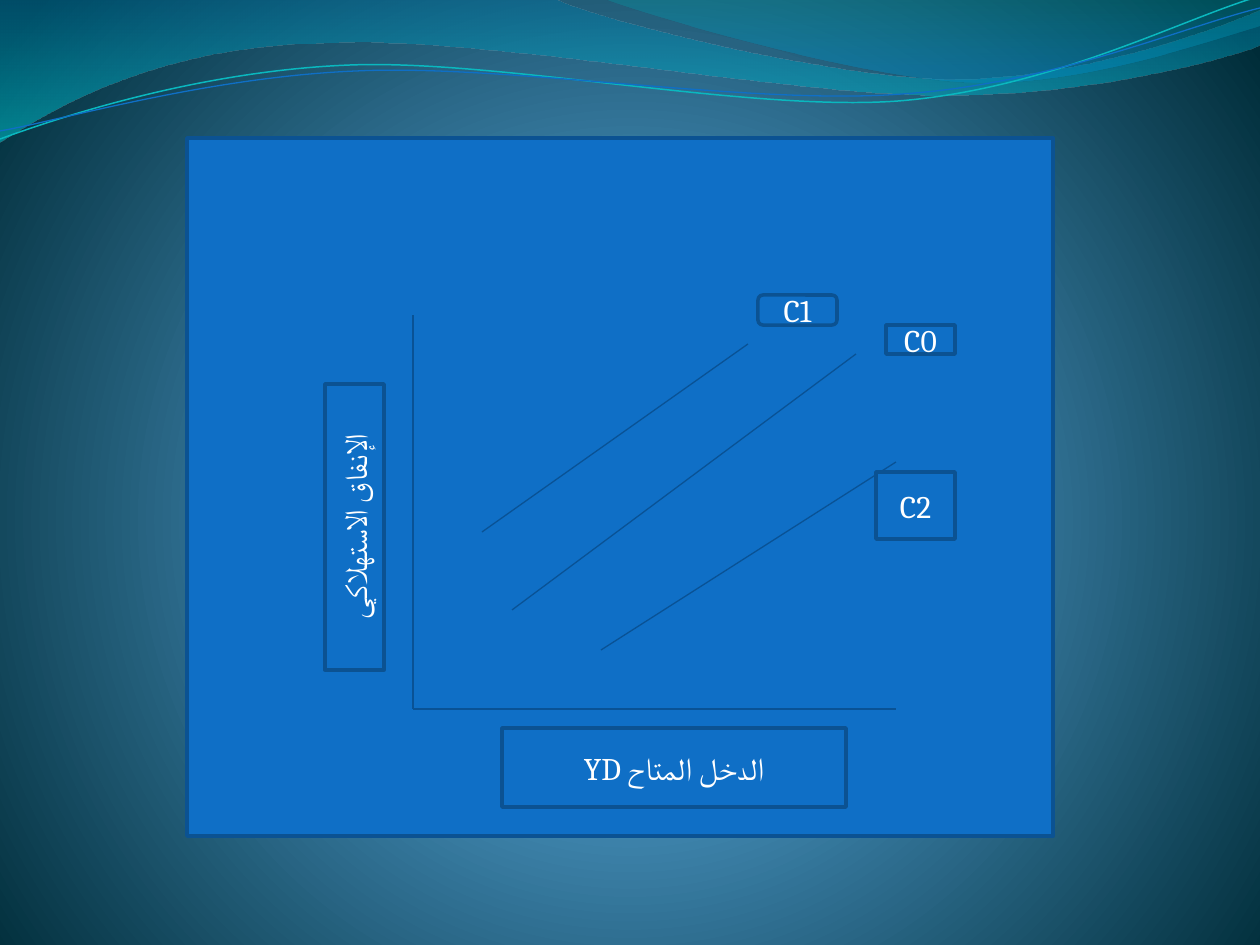
"""Build a slide showing shifts of the consumption function."""
from lxml.etree import SubElement
from pptx import Presentation
from pptx.dml.color import RGBColor
from pptx.enum.shapes import MSO_CONNECTOR, MSO_SHAPE
from pptx.enum.text import MSO_ANCHOR, PP_ALIGN
from pptx.oxml import parse_xml
from pptx.oxml.ns import nsdecls, qn
from pptx.util import Emu, Pt

SCALE = 914400 / 126
WIDTH, HEIGHT = 1260, 945
FONT = "Cambria"

COLORS = {
    "panel": "0F6FC6", "border": "0B5292", "axis": "095295", "text": "FFFFFF",
    "teal": "0AB8BF", "blue": "0F6FC6",
}
BACKGROUND_STOPS = [(0, "4AA0D6", 100), (25, "4C98C7", 100), (100, "002C38", 100)]
BACKGROUND_SHADE = ('<a:path path="circle">'
                    '<a:fillToRect l="10000" t="110000" r="10000" b="100000"/></a:path>')
DOWNWARD_SHADE = '<a:lin ang="5400000" scaled="1"/>'

# Each segment holds one point for a straight line or three for a Bezier curve.
WAVES = [
    ((0, 0), [
        [(554, -1)],
        [(600, 21), (837, 79), (955, 79)],
        [(1075, 79), (1207, 33), (1260, 11)],
        [(1261, 45)],
        [(1239, 55), (1096, 96), (940, 95)],
        [(784, 95), (481, 35), (324, 43)],
        [(163, 45), (58, 105), (-1, 142)],
    ], [(0, "0074A1", 45), (100, "00C6CF", 55)]),
    ((604, -1), [
        [(641, 14), (859, 78), (969, 82)],
        [(1079, 87), (1211, 40), (1260, 26)],
        [(1260, 0)],
    ], [(0, "00A1A9", 30), (80, "008BBF", 45)]),
]
RIBBONS = [
    ((0, 139), [
        [(60, 117), (199, 71), (349, 65)],
        [(498, 59), (747, 112), (898, 101)],
        [(1050, 89), (1182, 19), (1257, -3)],
    ], "teal", 0.85),
    ((0, 131), [
        [(59, 121), (207, 77), (357, 71)],
        [(508, 64), (752, 106), (903, 94)],
        [(1053, 84), (1186, 26), (1260, 8)],
    ], "blue", 0.75),
]
PANEL = (187, 138, 866, 698)
LINES = [
    (413, 315, 413, 709),
    (413, 709, 896, 709),
    (512, 610, 856, 354),
    (482, 532, 748, 344),
    (601, 650, 896, 462),
]
LABELS = [
    ("الإنفاق الاستهلاكي", (325, 384, 59, 286), MSO_SHAPE.RECTANGLE, True),
    ("الدخل المتاح YD", (502, 728, 344, 79), MSO_SHAPE.RECTANGLE, False),
    ("C1", (758, 295, 79, 30), MSO_SHAPE.ROUNDED_RECTANGLE, False),
    ("C2", (876, 472, 79, 67), MSO_SHAPE.RECTANGLE, False),
    ("C0", (886, 325, 69, 29), MSO_SHAPE.RECTANGLE, False),
]


def px(value):
    return Emu(round(value * SCALE))


def color(name):
    return RGBColor.from_string(COLORS[name])


def set_gradient(fill, parent, stops, shade):
    fill.gradient()
    items = "".join(
        f'<a:gs pos="{pos * 1000}"><a:srgbClr val="{rgb}">'
        f'<a:alpha val="{alpha * 1000}"/></a:srgbClr></a:gs>'
        for pos, rgb, alpha in stops)
    gradient = parse_xml(f'<a:gradFill {nsdecls("a")} rotWithShape="1">'
                         f'<a:gsLst>{items}</a:gsLst>{shade}</a:gradFill>')
    parent.replace(parent.find(qn("a:gradFill")), gradient)


def add_freeform(slide, start, segments, close):
    ends = [(px(x), px(y)) for x, y in (segment[-1] for segment in segments)]
    builder = slide.shapes.build_freeform(*map(px, start))
    builder.add_line_segments(ends, close=close)
    sp = builder.convert_to_shape()
    sp.shadow.inherit = False
    straight = list(sp._element.iter(qn("a:lnTo")))
    for segment, line in zip(segments, straight):
        if len(segment) == 3:
            points = "".join(f'<a:pt x="{px(x) - sp.left}" y="{px(y) - sp.top}"/>'
                             for x, y in segment)
            curve = parse_xml(f'<a:cubicBezTo {nsdecls("a")}>{points}</a:cubicBezTo>')
            line.getparent().replace(line, curve)
    return sp


def add_box(slide, kind, box):
    sp = slide.shapes.add_shape(kind, *map(px, box))
    sp.shadow.inherit = False
    sp.fill.solid()
    sp.fill.fore_color.rgb = color("panel")
    sp.line.color.rgb = color("border")
    sp.line.width = Pt(2)
    return sp


def add_label(slide, text, box, kind, vertical):
    tf = add_box(slide, kind, box).text_frame
    tf.word_wrap = True
    tf.vertical_anchor = MSO_ANCHOR.MIDDLE
    if vertical:
        tf._txBody.bodyPr.set("vert", "vert270")
    p = tf.paragraphs[0]
    r = p.add_run()
    r.text = text
    p.alignment = PP_ALIGN.CENTER
    p._p.get_or_add_pPr().set("rtl", "1")
    r.font.name, r.font.size = FONT, Pt(18)
    r.font.color.rgb = color("text")
    SubElement(r._r.get_or_add_rPr(), qn("a:cs")).set("typeface", FONT)


def add_line(slide, ends):
    line = slide.shapes.add_connector(MSO_CONNECTOR.STRAIGHT, *map(px, ends))
    line.line.color.rgb = color("axis")
    line.line.width = Pt(0.75)
    SubElement(line._element.spPr, qn("a:effectLst"))


def main():
    prs = Presentation()
    prs.slide_width, prs.slide_height = px(WIDTH), px(HEIGHT)
    slide = prs.slides.add_slide(prs.slide_layouts[6])
    fill = slide.background.fill
    set_gradient(fill, slide._element.cSld.bg.bgPr, BACKGROUND_STOPS, BACKGROUND_SHADE)
    for start, segments, stops in WAVES:
        sp = add_freeform(slide, start, segments, True)
        set_gradient(sp.fill, sp._element.spPr, stops, DOWNWARD_SHADE)
        sp.line.fill.background()
    for start, segments, name, width in RIBBONS:
        sp = add_freeform(slide, start, segments, False)
        sp.fill.background()
        sp.line.color.rgb = color(name)
        sp.line.width = Pt(width)
    add_box(slide, MSO_SHAPE.RECTANGLE, PANEL)
    for ends in LINES:
        add_line(slide, ends)
    for label in LABELS:
        add_label(slide, *label)
    prs.save("out.pptx")


if __name__ == "__main__":
    main()
